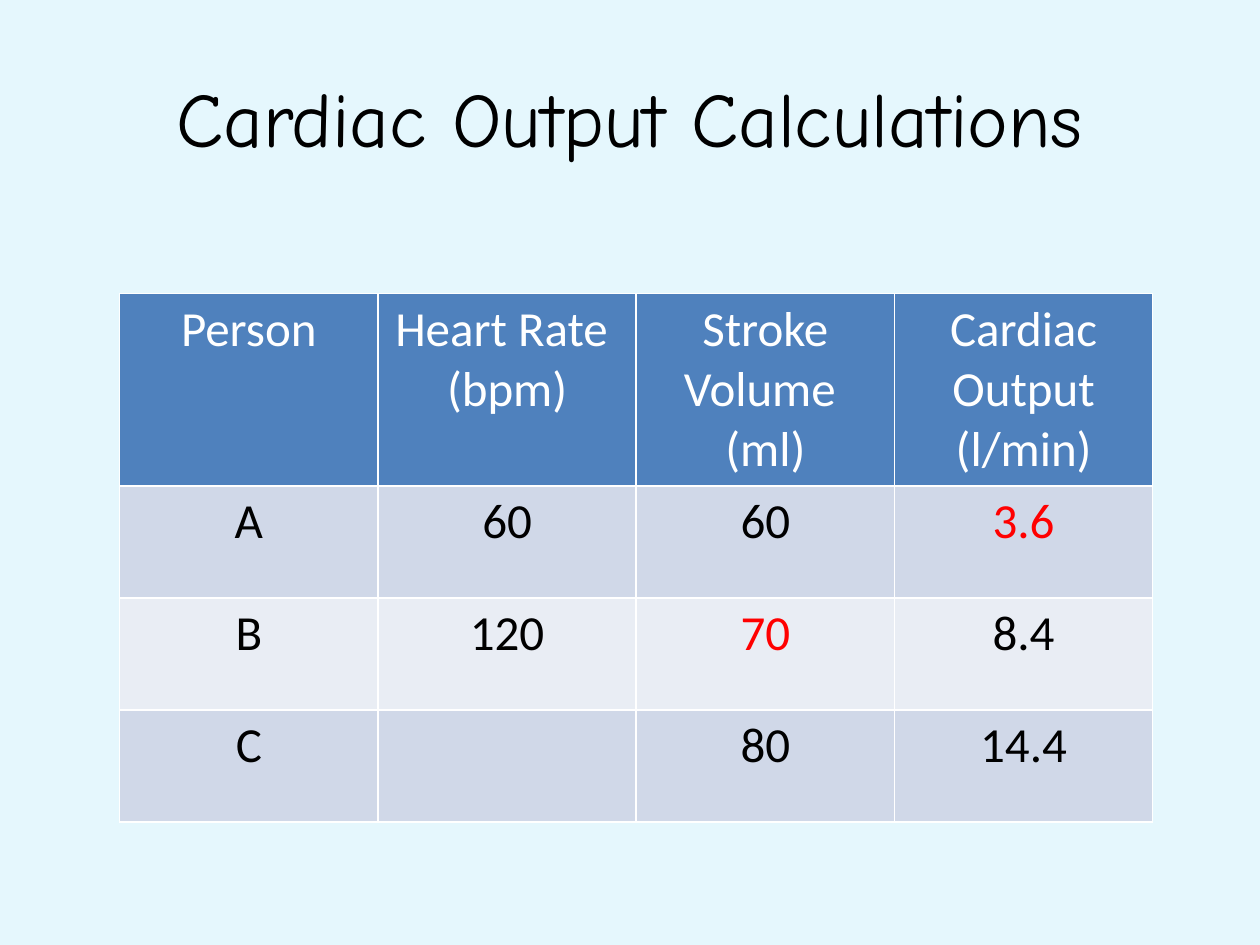
"""Build the cardiac output calculations slide."""
from dataclasses import dataclass

from pptx import Presentation
from pptx.dml.color import RGBColor
from pptx.enum.text import MSO_ANCHOR, PP_ALIGN
from pptx.util import Inches, Pt


@dataclass(frozen=True)
class Theme:
    background: RGBColor = RGBColor(0xE5, 0xF7, 0xFD)
    text: RGBColor = RGBColor(0x00, 0x00, 0x00)
    answer: RGBColor = RGBColor(0xFF, 0x00, 0x00)
    header_text: RGBColor = RGBColor(0xFF, 0xFF, 0xFF)
    header_fill: RGBColor = RGBColor(0x4F, 0x81, 0xBD)
    odd_fill: RGBColor = RGBColor(0xD0, 0xD8, 0xE8)
    even_fill: RGBColor = RGBColor(0xE9, 0xED, 0xF4)
    title_font: str = "Comic Neue"
    body_font: str = "Calibri"
    title_size: Pt = Pt(44)
    body_size: Pt = Pt(28)


theme = Theme()


def format_paragraph(p, font, size, color):
    p.alignment = PP_ALIGN.CENTER
    p.font.name = font
    p.font.size = size
    p.font.bold = False
    p.font.color.rgb = color


ROWS = [
    ["Person", "Heart Rate \n(bpm)", "Stroke Volume \n(ml)", "Cardiac Output\n(l/min)"],
    ["A", "60", "60", "3.6"],
    ["B", "120", "70", "8.4"],
    ["C", "", "80", "14.4"],
]
ANSWERS = {(1, 3), (2, 2)}

prs = Presentation()
prs.slide_width, prs.slide_height = Inches(10), Inches(7.5)
s = prs.slides.add_slide(prs.slide_layouts[5])
s.background.fill.solid()
s.background.fill.fore_color.rgb = theme.background

title = s.shapes.title
title.left, title.top = Inches(0.5), Inches(0.3)
title.width, title.height = Inches(9), Inches(1.25)
tf = title.text_frame
tf.text = "Cardiac Output Calculations"
tf.vertical_anchor = MSO_ANCHOR.MIDDLE
format_paragraph(tf.paragraphs[0], theme.title_font, theme.title_size, theme.text)

table = s.shapes.add_table(
    len(ROWS), len(ROWS[0]), Inches(0.95), Inches(2.33), Inches(8.2), Inches(3.56)
).table

for i, row in enumerate(ROWS):
    for j, text in enumerate(row):
        if i == 0:
            fill, color = theme.header_fill, theme.header_text
        else:
            fill = theme.odd_fill if i % 2 else theme.even_fill
            color = theme.answer if (i, j) in ANSWERS else theme.text
        cell = table.cell(i, j)
        cell.text = text
        cell.margin_left = cell.margin_right = Inches(0.07)
        cell.margin_top = cell.margin_bottom = Inches(0.05)
        cell.fill.solid()
        cell.fill.fore_color.rgb = fill
        for p in cell.text_frame.paragraphs:
            format_paragraph(p, theme.body_font, theme.body_size, color)

prs.save("out.pptx")
